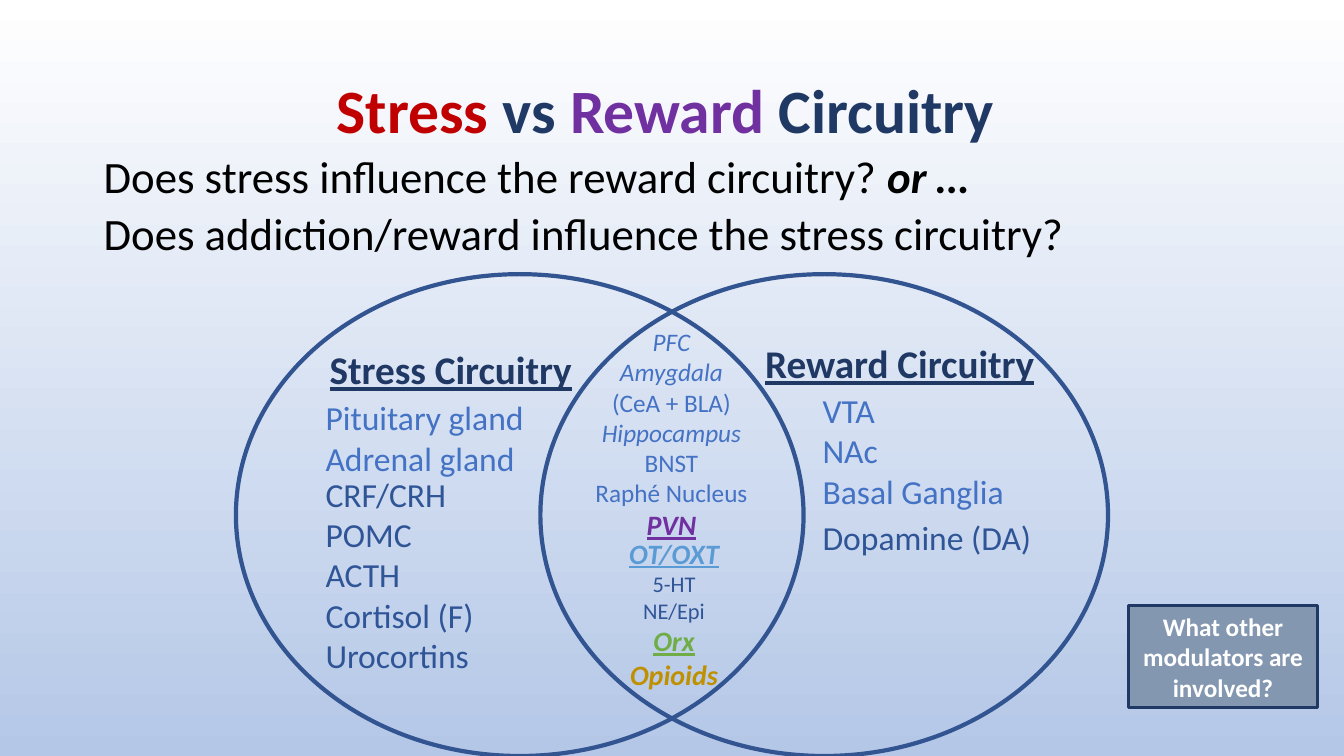
from dataclasses import dataclass, replace

from pptx import Presentation
from pptx.dml.color import RGBColor
from pptx.enum.shapes import MSO_SHAPE
from pptx.enum.text import MSO_ANCHOR, MSO_AUTO_SIZE, PP_ALIGN
from pptx.shapes.autoshape import Shape
from pptx.slide import Slide
from pptx.text.text import Font, TextFrame
from pptx.util import Inches, Pt


@dataclass(frozen=True)
class Theme:
    font: str = "Calibri"
    title: int = 44
    question: int = 32
    heading: int = 28
    item: int = 24
    key: int = 20
    shared: int = 18
    small: int = 16
    black: str = "000000"
    white: str = "FFFFFF"
    sky: str = "B4C7E7"
    navy: str = "203864"
    outline: str = "325491"
    region: str = "4472C4"
    hormone: str = "2F5597"
    red: str = "C00000"
    purple: str = "7030A0"
    light_blue: str = "5B9BD5"
    green: str = "70AD47"
    gold: str = "BF9000"
    slate: str = "8497B0"


@dataclass(frozen=True)
class Style:
    size: int
    color: str
    bold: bool = False
    italic: bool = False
    underline: bool = False


@dataclass(frozen=True)
class Span:
    text: str
    style: Style


@dataclass(frozen=True)
class Box:
    left: float
    top: float
    width: float
    height: float


@dataclass(frozen=True)
class TextBlock:
    box: Box
    lines: list[list[Span]]
    align: PP_ALIGN = PP_ALIGN.LEFT
    line_spacing: float = 1.0
    gap: int = 0


THEME = Theme()
TITLE = Style(THEME.title, THEME.navy, bold=True)
QUESTION = Style(THEME.question, THEME.black)
HEADING = Style(THEME.heading, THEME.navy, bold=True, underline=True)
REGION = Style(THEME.item, THEME.region)
HORMONE = Style(THEME.item, THEME.hormone)
SHARED = Style(THEME.shared, THEME.region)
SHARED_ITALIC = replace(SHARED, italic=True)
KEY = Style(THEME.key, THEME.purple, bold=True, italic=True, underline=True)
SMALL = Style(THEME.small, THEME.hormone)
CALLOUT = Style(THEME.shared, THEME.white, bold=True)


def column(style: Style, *texts: str) -> list[list[Span]]:
    """Return one single-style line per text."""
    return [[Span(text, style)] for text in texts]


TITLE_BLOCK = TextBlock(
    Box(0.92, 0.4, 11.5, 1.45),
    [[
        Span("Stress", replace(TITLE, color=THEME.red)),
        Span(" vs ", TITLE),
        Span("Reward", replace(TITLE, color=THEME.purple)),
        Span(" Circuitry ", TITLE),
    ]],
    PP_ALIGN.CENTER,
    0.9,
)
CALLOUT_BLOCK = TextBlock(
    Box(11.19, 6.01, 1.88, 1.01),
    column(CALLOUT, "What other modulators are involved?"),
    PP_ALIGN.CENTER,
)
TEXT_BLOCKS = [
    TextBlock(
        Box(0.93, 1.49, 11.5, 1.23),
        [
            [
                Span("Does stress influence the reward circuitry? ", QUESTION),
                Span("or …", replace(QUESTION, bold=True, italic=True)),
            ],
            *column(QUESTION, "Does addiction/reward influence the stress circuitry?"),
        ],
        line_spacing=0.9,
        gap=6,
    ),
    TextBlock(Box(7.49, 3.32, 2.97, 0.57), column(HEADING, "Reward Circuitry")),
    TextBlock(Box(3.13, 3.38, 2.64, 0.57), column(HEADING, "Stress Circuitry"), PP_ALIGN.RIGHT),
    TextBlock(Box(8.06, 3.82, 2.2, 2.52), column(REGION, "VTA", "NAc", "Basal Ganglia")),
    TextBlock(
        Box(5.56, 3.19, 2.2, 2.73),
        column(SHARED_ITALIC, "PFC", "Amygdala")
        + column(SHARED, "(CeA + BLA)")
        + column(SHARED_ITALIC, "Hippocampus")
        + column(SHARED, "BNST", "Raphé Nucleus")
        + column(KEY, "PVN"),
        PP_ALIGN.CENTER,
    ),
    TextBlock(Box(3.13, 3.89, 2.69, 2.12), column(REGION, "Pituitary gland", "Adrenal gland")),
    TextBlock(
        Box(5.76, 5.27, 1.85, 1.65),
        column(replace(KEY, color=THEME.light_blue), "OT/OXT")
        + column(SMALL, "5-HT", "NE/Epi")
        + column(replace(KEY, color=THEME.green), "Orx")
        + column(replace(KEY, color=THEME.gold, underline=False), "Opioids"),
        PP_ALIGN.CENTER,
    ),
    TextBlock(
        Box(3.13, 4.65, 2.69, 2.12),
        column(HORMONE, "CRF/CRH", "POMC", "ACTH", "Cortisol (F)", "Urocortins"),
    ),
    TextBlock(Box(8.06, 5.08, 2.45, 0.5), column(HORMONE, "Dopamine (DA)")),
]
CIRCLES = [Box(left, 2.72, 5.63, 4.78) for left in (2.34, 5.36)]


def place(box: Box) -> tuple[int, int, int, int]:
    """Return the box as slide lengths."""
    return Inches(box.left), Inches(box.top), Inches(box.width), Inches(box.height)


def format_font(font: Font, style: Style) -> None:
    """Apply a text style to a font."""
    font.name = THEME.font
    font.size = Pt(style.size)
    font.color.rgb = RGBColor.from_string(style.color)
    font.bold = style.bold
    font.italic = style.italic
    font.underline = style.underline


def write_text(frame: TextFrame, block: TextBlock) -> None:
    """Write the lines of a block into a text frame."""
    frame.word_wrap = True
    frame.auto_size = MSO_AUTO_SIZE.NONE
    for index, line in enumerate(block.lines):
        paragraph = frame.add_paragraph() if index else frame.paragraphs[0]
        paragraph.alignment = block.align
        paragraph.line_spacing = block.line_spacing
        paragraph.space_before = Pt(block.gap if index else 0)
        if len(line) == 1:
            format_font(paragraph.font, line[0].style)
        for span in line:
            run = paragraph.add_run()
            run.text = span.text
            if len(line) > 1:
                format_font(run.font, span.style)


def add_outlined(slide: Slide, kind: MSO_SHAPE, box: Box, color: str, weight: float) -> Shape:
    """Add an unfilled shape with a coloured outline."""
    shape = slide.shapes.add_shape(kind, *place(box))
    shape.shadow.inherit = False
    shape.fill.background()
    shape.line.color.rgb = RGBColor.from_string(color)
    shape.line.width = Pt(weight)
    return shape


def main() -> None:
    """Build and save the slide."""
    presentation = Presentation()
    presentation.slide_width, presentation.slide_height = Inches(13.33), Inches(7.5)
    slide = presentation.slides.add_slide(presentation.slide_layouts.get_by_name("Title Only"))
    background = slide.background.fill
    background.gradient()
    background.gradient_angle = 270
    for stop, color in zip(background.gradient_stops, (THEME.white, THEME.sky)):
        stop.color.rgb = RGBColor.from_string(color)

    title = slide.shapes.title
    title.left, title.top, title.width, title.height = place(TITLE_BLOCK.box)
    title.text_frame.vertical_anchor = MSO_ANCHOR.MIDDLE
    write_text(title.text_frame, TITLE_BLOCK)
    for circle in CIRCLES:
        add_outlined(slide, MSO_SHAPE.OVAL, circle, THEME.outline, 3)
    for block in TEXT_BLOCKS:
        write_text(slide.shapes.add_textbox(*place(block.box)).text_frame, block)
    callout = add_outlined(slide, MSO_SHAPE.RECTANGLE, CALLOUT_BLOCK.box, THEME.navy, 2.25)
    callout.fill.solid()
    callout.fill.fore_color.rgb = RGBColor.from_string(THEME.slate)
    write_text(callout.text_frame, CALLOUT_BLOCK)
    presentation.save("out.pptx")


if __name__ == "__main__":
    main()
